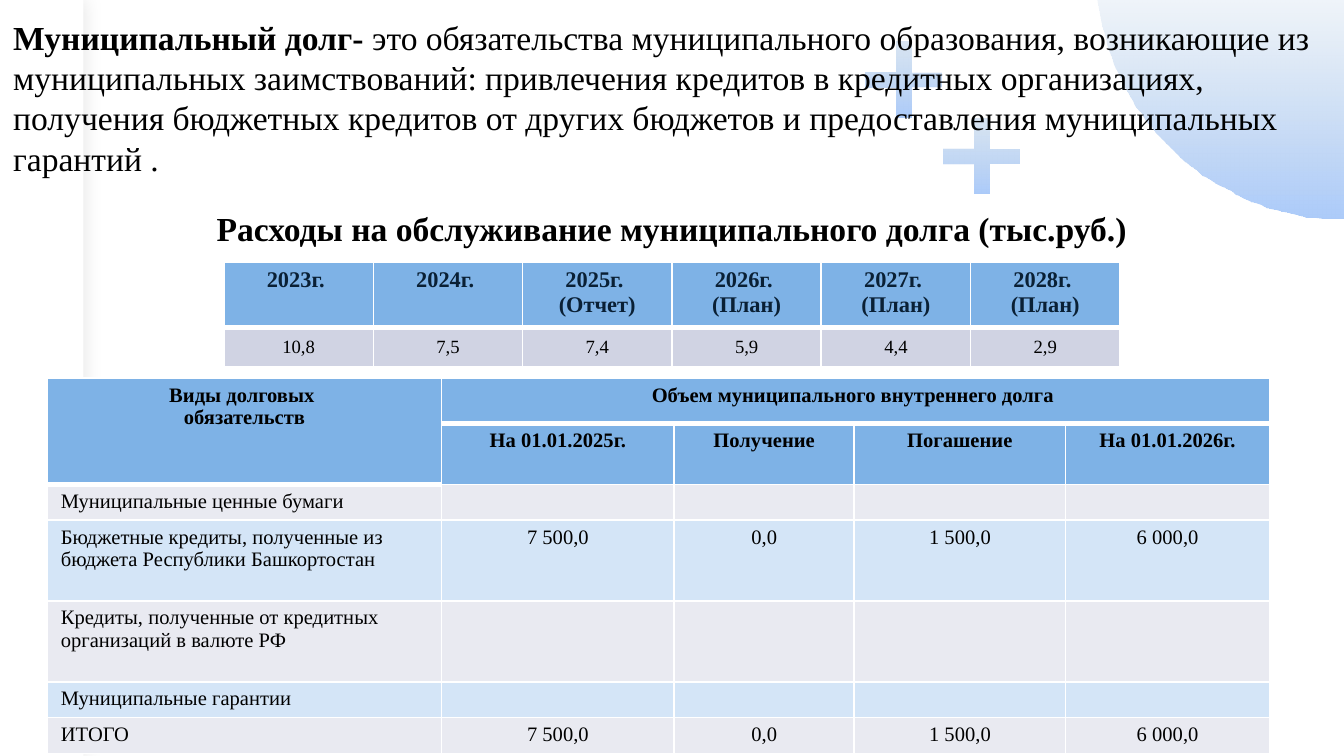
from lxml import etree
from pptx import Presentation
from pptx.dml.color import RGBColor
from pptx.enum.shapes import MSO_SHAPE as Shape
from pptx.enum.text import MSO_ANCHOR as Anchor, PP_ALIGN as Align
from pptx.oxml.ns import qn
from pptx.util import Pt

HEADER, WHITE, BLACK = "7EB2E6", "FFFFFF", "000000"


def color(value):
    return RGBColor.from_string(value)


def add_xml(parent, tag, **attributes):
    return etree.SubElement(parent, qn(tag), attributes)


def curve(start, first, second, end, steps=40):
    """Points along a cubic curve, without its start."""
    points = []
    for step in range(1, steps + 1):
        t = step / steps
        weights = ((1 - t) ** 3, 3 * t * (1 - t) ** 2, 3 * t * t * (1 - t), t ** 3)
        points.append(tuple(
            sum(w * p[axis] for w, p in zip(weights, (start, first, second, end)))
            for axis in (0, 1)))
    return points


class SlideBuilder:
    def __init__(self, page, font="Times New Roman"):
        self.page = page
        self.font = font

    def add_span(self, para, text, **formats):
        span = para.add_run()
        span.text = text
        span.font.color.rgb = color(formats.pop("color", BLACK))
        for name, value in {"name": self.font, **formats}.items():
            setattr(span.font, name, value)

    def fade(self, shape, opacity):
        """Fill a shape with blue that fades towards its top."""
        shape.shadow.inherit = False
        shape.line.fill.background()
        shape.fill.gradient()
        shape.fill.gradient_angle = 270
        for stop, value in zip(shape.fill.gradient_stops, ("B4CCE7", "ACCBF9")):
            stop.color.rgb = color(value)
        top_color = next(shape._element.spPr.iter(qn("a:srgbClr")))
        add_xml(top_color, "a:alpha", val=str(opacity * 1000))

    def disc(self, points, opacity):
        builder = self.page.shapes.build_freeform(*points[0], scale=Pt(1))
        builder.add_line_segments(points[1:], close=True)
        self.fade(builder.convert_to_shape(), opacity)

    def plus(self, left, top, size, opacity):
        shape = self.page.shapes.add_shape(
            Shape.CROSS, Pt(left), Pt(top), Pt(size), Pt(size))
        shape.adjustments[0] = 0.4
        self.fade(shape, opacity)

    def side_band(self, width, height):
        band = self.page.shapes.add_shape(
            Shape.RECTANGLE, 0, 0, Pt(width), Pt(height))
        band.fill.solid()
        band.fill.fore_color.rgb = color(WHITE)
        band.line.fill.background()
        band.shadow.inherit = False
        effects = band._element.spPr.find(qn("a:effectLst"))
        shadow = add_xml(effects, "a:outerShdw", blurRad=str(Pt(10)), dist="0")
        add_xml(add_xml(shadow, "a:srgbClr", val=BLACK), "a:alpha", val="10000")

    def text(self, left, top, width, height, top_margin, paragraphs):
        """Each paragraph is its spans, alignment and space before."""
        box = self.page.shapes.add_textbox(Pt(left), Pt(top), Pt(width), Pt(height))
        frame = box.text_frame
        frame.word_wrap = True
        frame.margin_top = Pt(top_margin)
        for index, (spans, align, before) in enumerate(paragraphs):
            para = frame.add_paragraph() if index else frame.paragraphs[0]
            formats = {"alignment": align, "space_before": Pt(before),
                       "line_spacing": Pt(21.6)}
            for name, value in formats.items():
                setattr(para, name, value)
            for text, bold in spans:
                self.add_span(para, text, size=Pt(18), bold=bold)

    def borders(self, cell, top, bottom):
        properties = cell._tc.get_or_add_tcPr()
        widths = {"a:lnL": 1, "a:lnR": 1, "a:lnT": top, "a:lnB": bottom}
        for position, (tag, width) in enumerate(widths.items()):
            line = add_xml(properties, tag, w=str(Pt(width)))
            add_xml(add_xml(line, "a:solidFill"), "a:srgbClr", val=WHITE)
            properties.insert(position, line)

    def table(self, left, top, widths, heights, rows, style, merges=(), thick=()):
        """style(row, column) gives fill, alignment, anchor and font formats;
        thick lists the cells with a heavy bottom border."""
        table = self.page.shapes.add_table(
            len(heights), len(widths), Pt(left), Pt(top),
            Pt(sum(widths)), Pt(sum(heights))).table
        for lines, sizes, name in ((table.columns, widths, "width"),
                                   (table.rows, heights, "height")):
            for line, size in zip(lines, sizes):
                setattr(line, name, Pt(size))
        for first, last in merges:
            table.cell(*first).merge(table.cell(*last))
        for row, texts in enumerate(rows):
            for column, text in enumerate(texts):
                cell = table.cell(row, column)
                fill, align, anchor, formats = style(row, column)
                cell.fill.solid()
                cell.fill.fore_color.rgb = color(fill)
                cell.margin_top = cell.margin_bottom = Pt(3)
                cell.vertical_anchor = anchor
                self.borders(cell, 3 if (row - 1, column) in thick else 1,
                             3 if (row, column) in thick else 1)
                frame = cell.text_frame
                for index, part in enumerate(text.split("\n")):
                    para = frame.add_paragraph() if index else frame.paragraphs[0]
                    para.alignment = align
                    if part:
                        self.add_span(para, part, **formats)
                    else:
                        end = para._p.get_or_add_endParaRPr()
                        end.set("sz", str(int(formats["size"].pt * 100)))


def cost_style(row, column):
    if row == 0:
        return HEADER, Align.CENTER, Anchor.TOP, {
            "size": Pt(12), "bold": True, "color": "0A2035"}
    return "D0D3E3", Align.CENTER, Anchor.MIDDLE, {"size": Pt(10), "bold": False}


def debt_style(row, column):
    is_header = row < 2
    fill = HEADER if is_header else ("E9EAF1", "D4E5F7")[row % 2]
    align = Align.CENTER if is_header or column else Align.LEFT
    return fill, align, Anchor.TOP, {"size": Pt(11), "bold": is_header}


def main():
    deck = Presentation()
    deck.slide_width, deck.slide_height = Pt(720), Pt(405)
    slide = SlideBuilder(deck.slides.add_slide(deck.slide_layouts[6]))

    arc = curve((707.8, 116.6), (649.4, 111.6), (601.2, 67.7), (589.7, 10.8))
    slide.disc([(588.2, 0), (720, 0), (720, 116.6), (707.8, 116.6)] + arc, 20)
    slide.side_band(44.8, 405)
    for left, top in ((463.7, 22.3), (505.4, 63.4)):
        slide.plus(left, top, 40.5, 50)

    definition = [
        ("Муниципальный долг- ", True),
        ("это обязательства муниципального образования, возникающие из "
         "муниципальных заимствований: привлечения кредитов в кредитных "
         "организациях, получения бюджетных кредитов от других бюджетов и "
         "предоставления муниципальных гарантий .", False)]
    heading = [("Расходы на обслуживание муниципального долга (тыс.руб.)", True)]
    slide.text(0, -16.6, 720, 159.8, 25.5, [
        (definition, Align.LEFT, 0), (heading, Align.CENTER, 16)])

    years = ["2023г. ", "2024г. ", "2025г. \n(Отчет)"]
    years += [f"{year}г. \n(План)" for year in (2026, 2027, 2028)]
    costs = ["10,8", "7,5", "7,4", "5,9", "4,4", "2,9"]
    slide.table(120, 140.6, [80] * 6, [34, 21.4], [years, costs], cost_style,
                thick=[(0, column) for column in range(6)])

    empty = [""] * 4
    amounts = ["7 500,0", "0,0", "1 500,0", "6 000,0"]
    debts = [
        ["Виды долговых \nобязательств",
         "Объем муниципального внутреннего долга ", "", "", ""],
        ["", "На 01.01.2025г.", "Получение", "Погашение", "На 01.01.2026г."],
        ["Муниципальные ценные бумаги"] + empty,
        ["Бюджетные кредиты, полученные из бюджета Республики Башкортостан"] + amounts,
        ["Кредиты, полученные от кредитных организаций в валюте РФ"] + empty,
        ["Муниципальные гарантии"] + empty,
        ["ИТОГО"] + amounts]
    slide.table(25.4, 202.6, [211.2, 124.6, 96.5, 113.2, 109.3],
                [24.5, 31.5, 18.3, 43.3, 43.3, 18.3, 18.3], debts, debt_style,
                merges=[((0, 0), (1, 0)), ((0, 1), (0, 4))],
                thick=[(0, column) for column in range(5)] + [(1, 0)])
    deck.save("out.pptx")


if __name__ == "__main__":
    main()
